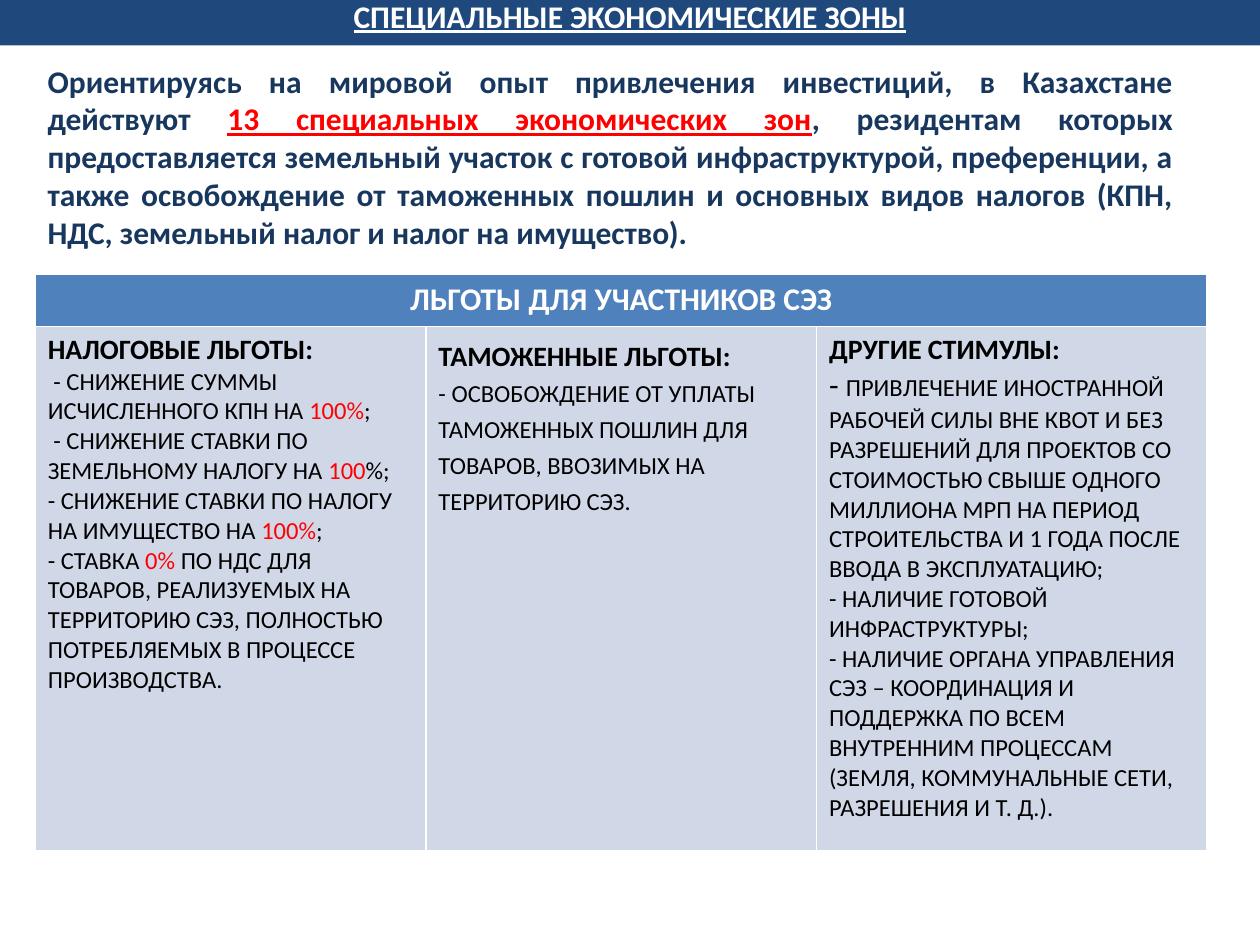
from pptx import Presentation
from pptx.dml.color import RGBColor
from pptx.enum.text import MSO_ANCHOR as Anchor, MSO_AUTO_SIZE as AutoSize, PP_ALIGN as Align
from pptx.util import Inches, Pt

# Content: a paragraph is a list of (text, style) runs
TITLE = [("СПЕЦИАЛЬНЫЕ ЭКОНОМИЧЕСКИЕ ЗОНЫ", "title")]
INTRO = [
    ("Ориентируясь на мировой опыт привлечения инвестиций, в Казахстане действуют ", "intro"),
    ("13 специальных экономических зон", "accent"),
    (", резидентам которых предоставляется земельный участок с готовой инфраструктурой, "
     "преференции, а также освобождение от таможенных пошлин и основных видов налогов "
     "(КПН, НДС, земельный налог и налог на имущество).", "intro"),
]
TABLE_HEAD = [("ЛЬГОТЫ ДЛЯ УЧАСТНИКОВ СЭЗ", "table_head")]
BENEFITS = [
    [
        [("НАЛОГОВЫЕ ЛЬГОТЫ:", "heading")],
        [(" - СНИЖЕНИЕ СУММЫ ИСЧИСЛЕННОГО КПН НА ", "item"), ("100%", "rate"), (";", "item")],
        [(" - СНИЖЕНИЕ СТАВКИ ПО ЗЕМЕЛЬНОМУ НАЛОГУ НА ", "item"), ("100", "rate"), ("%;", "item")],
        [("- СНИЖЕНИЕ СТАВКИ ПО НАЛОГУ НА ИМУЩЕСТВО НА ", "item"), ("100%", "rate"), (";", "item")],
        [("- СТАВКА ", "item"), ("0% ", "rate"),
         ("ПО НДС ДЛЯ ТОВАРОВ, РЕАЛИЗУЕМЫХ НА ТЕРРИТОРИЮ СЭЗ, ПОЛНОСТЬЮ ПОТРЕБЛЯЕМЫХ "
          "В ПРОЦЕССЕ ПРОИЗВОДСТВА.", "item")],
    ],
    [
        [("ТАМОЖЕННЫЕ ЛЬГОТЫ:", "heading")],
        [("- ОСВОБОЖДЕНИЕ ОТ УПЛАТЫ ТАМОЖЕННЫХ ПОШЛИН ДЛЯ ТОВАРОВ, ВВОЗИМЫХ НА "
          "ТЕРРИТОРИЮ СЭЗ.", "item")],
    ],
    [
        [("ДРУГИЕ СТИМУЛЫ:", "heading")],
        [("- ", "dash"),
         ("ПРИВЛЕЧЕНИЕ ИНОСТРАННОЙ РАБОЧЕЙ СИЛЫ ВНЕ КВОТ И БЕЗ РАЗРЕШЕНИЙ ДЛЯ ПРОЕКТОВ СО "
          "СТОИМОСТЬЮ СВЫШЕ ОДНОГО МИЛЛИОНА МРП НА ПЕРИОД СТРОИТЕЛЬСТВА И 1 ГОДА ПОСЛЕ "
          "ВВОДА В ЭКСПЛУАТАЦИЮ;", "item")],
        [("- НАЛИЧИЕ ГОТОВОЙ ИНФРАСТРУКТУРЫ;", "item")],
        [("- НАЛИЧИЕ ОРГАНА УПРАВЛЕНИЯ СЭЗ – КООРДИНАЦИЯ И ПОДДЕРЖКА ПО ВСЕМ ВНУТРЕННИМ "
          "ПРОЦЕССАМ (ЗЕМЛЯ, КОММУНАЛЬНЫЕ СЕТИ, РАЗРЕШЕНИЯ И Т. Д.).", "item")],
    ],
]

# Formats
COLORS = {"band": "1F497D", "white": "FFFFFF", "navy": "17375E", "red": "FF0000",
          "black": "000000", "head": "4F81BD", "cell": "D0D8E8"}
STYLES = {  # size, colour, bold, underline
    "title": (18, "white", True, True),
    "intro": (18, "navy", True, False),
    "accent": (18, "red", True, True),
    "table_head": (18, "white", True, False),
    "heading": (16, "black", True, False),
    "item": (14, "black", False, False),
    "rate": (14, "red", False, False),
    "dash": (18, "black", False, False),
}
LOOSE_COLUMN = 1
MARGIN, TABLE_TOP, COL_W = 0.28, 2.18, 3.1
ROW_H = [0.41, 4.16]


def color(name):
    return RGBColor.from_string(COLORS[name])


def paint(obj, name):
    obj.fill.solid()
    obj.fill.fore_color.rgb = color(name)


def write(tf, paragraphs, align=Align.LEFT):
    tf.word_wrap = True
    for i, runs in enumerate(paragraphs):
        p = tf.add_paragraph() if i else tf.paragraphs[0]
        p.alignment = align
        for text, style in runs:
            size, ink, bold, underline = STYLES[style]
            r = p.add_run()
            r.text = text
            formats = {"name": "Calibri", "size": Pt(size), "bold": bold, "underline": underline}
            for key, value in formats.items():
                setattr(r.font, key, value)
            r.font.color.rgb = color(ink)


prs = Presentation()
prs.slide_width, prs.slide_height = Inches(10), Inches(7.5)
s = prs.slides.add_slide(prs.slide_layouts[5])

# Title band
title = s.shapes.title
box = {"left": 0, "top": -0.11, "width": 10, "height": 0.47}
for key, value in box.items():
    setattr(title, key, Inches(value))
paint(title, "band")
title.text_frame.auto_size = AutoSize.NONE
title.text_frame.vertical_anchor = Anchor.MIDDLE
write(title.text_frame, [TITLE], Align.CENTER)

# Introduction
intro = s.shapes.add_textbox(Inches(MARGIN), Inches(0.44), Inches(9.13), Inches(1.62))
write(intro.text_frame, [INTRO], Align.JUSTIFY)

# Table of benefits
n = len(BENEFITS)
table = s.shapes.add_table(len(ROW_H), n, Inches(MARGIN), Inches(TABLE_TOP),
                           Inches(n * COL_W), Inches(sum(ROW_H))).table
for row, height in zip(table.rows, ROW_H):
    row.height = Inches(height)
head = table.cell(0, 0)
head.merge(table.cell(0, n - 1))
paint(head, "head")
write(head.text_frame, [TABLE_HEAD], Align.CENTER)
for c, paragraphs in enumerate(BENEFITS):
    table.columns[c].width = Inches(COL_W)
    cell = table.cell(1, c)
    paint(cell, "cell")
    write(cell.text_frame, paragraphs)

# Looser lines in the customs column
loose = table.cell(1, LOOSE_COLUMN).text_frame.paragraphs
for p in loose:
    p.line_spacing = 1.2
loose[0].space_before = loose[-1].space_after = Pt(2.9)

prs.save("out.pptx")
